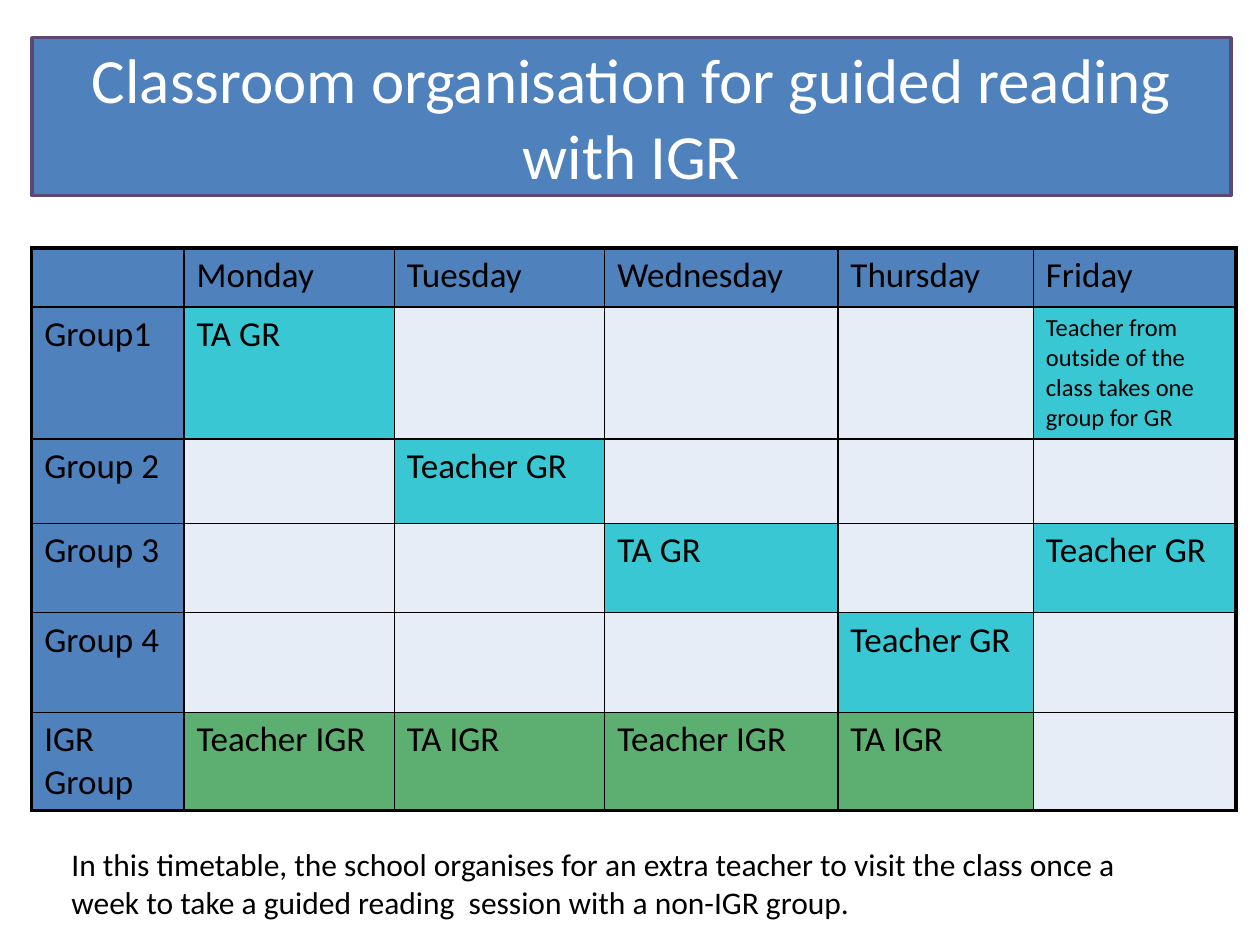
from lxml.etree import SubElement
from pptx import Presentation
from pptx.dml.color import RGBColor
from pptx.enum.text import MSO_ANCHOR, MSO_AUTO_SIZE, PP_ALIGN
from pptx.oxml.ns import qn
from pptx.util import Cm, Pt

TITLE = "Classroom organisation for guided reading with IGR"
TIMETABLE = [
    ["", "Monday", "Tuesday", "Wednesday", "Thursday", "Friday"],
    ["Group1", "TA GR", "", "", "", "Teacher from outside of the class takes one group for GR"],
    ["Group 2", "", "Teacher GR", "", "", ""],
    ["Group 3", "", "", "TA GR", "", "Teacher GR"],
    ["Group 4", "", "", "", "Teacher GR", ""],
    ["IGR Group", "Teacher IGR", "TA IGR", "Teacher IGR", "TA IGR", ""],
]
NOTE = ("In this timetable, the school organises for an extra teacher to visit the class "
        "once a week to take a guided reading  session with a non-IGR group.")

COLUMN_WIDTHS = [3.07, 4.24, 4.24, 4.7, 3.94, 4.09]
ROW_HEIGHTS = [1.19, 2.64, 1.7, 1.8, 2.01, 1.98]
LEFT = 0.64
LONG_TEXT = 20

THEME = {
    "font": "Calibri",
    "header": "4F81BD",
    "guided": "39C8D3",
    "igr": "5DAF71",
    "free": "E6EDF6",
    "frame": "5C4776",
    "ink": "000000",
    "white": "FFFFFF",
    "title_size": 36,
    "cell_size": 20,
    "small_size": 14,
    "note_size": 18,
    "frame_width": 2,
    "inner_border": 1,
    "outer_border": 2.25,
}


def colour(name):
    return RGBColor.from_string(THEME[name])


def add_text(frame, text, size, ink="ink"):
    para = frame.paragraphs[0]
    span = para.add_run()
    span.text = text
    span.font.name = THEME["font"]
    span.font.size = Pt(THEME[size])
    span.font.color.rgb = colour(ink)
    return para


def cell_fill(row, column, text):
    if row == 0 or column == 0:
        return "header"
    if not text:
        return "free"
    return "igr" if "IGR" in text else "guided"


def add_borders(cell, outer_sides):
    properties = cell._tc.get_or_add_tcPr()
    for side, is_outer in outer_sides.items():
        width = THEME["outer_border" if is_outer else "inner_border"]
        line = SubElement(properties, qn(f"a:ln{side}"), w=str(Pt(width)))
        fill = SubElement(line, qn("a:solidFill"))
        SubElement(fill, qn("a:srgbClr"), val=THEME["ink"])


def add_title(page):
    box = page.shapes.title
    box.left, box.top, box.width, box.height = Cm(LEFT), Cm(0.76), Cm(24.18), Cm(3.18)
    box.fill.solid()
    box.fill.fore_color.rgb = colour("header")
    box.line.color.rgb = colour("frame")
    box.line.width = Pt(THEME["frame_width"])
    frame = box.text_frame
    frame.auto_size = MSO_AUTO_SIZE.NONE
    frame.vertical_anchor = MSO_ANCHOR.MIDDLE
    add_text(frame, TITLE, "title_size", "white").alignment = PP_ALIGN.CENTER


def add_timetable(page):
    last_row, last_column = len(ROW_HEIGHTS) - 1, len(COLUMN_WIDTHS) - 1
    table = page.shapes.add_table(
        len(ROW_HEIGHTS), len(COLUMN_WIDTHS), Cm(LEFT), Cm(5),
        Cm(sum(COLUMN_WIDTHS)), Cm(sum(ROW_HEIGHTS))).table
    for column, width in zip(table.columns, COLUMN_WIDTHS):
        column.width = Cm(width)
    for row, height in zip(table.rows, ROW_HEIGHTS):
        row.height = Cm(height)
    for row, texts in enumerate(TIMETABLE):
        for column, text in enumerate(texts):
            cell = table.cell(row, column)
            add_borders(cell, {"L": column == 0, "R": column == last_column,
                               "T": row == 0, "B": row == last_row})
            cell.fill.solid()
            cell.fill.fore_color.rgb = colour(cell_fill(row, column, text))
            if text:
                size = "small_size" if len(text) > LONG_TEXT else "cell_size"
                add_text(cell.text_frame, text, size)


def add_note(page):
    box = page.shapes.add_textbox(Cm(1.19), Cm(16.92), Cm(22.86), Cm(1.8))
    frame = box.text_frame
    frame.word_wrap = True
    frame.auto_size = MSO_AUTO_SIZE.SHAPE_TO_FIT_TEXT
    add_text(frame, NOTE, "note_size")


def main():
    deck = Presentation()
    deck.slide_width, deck.slide_height = Cm(25.4), Cm(19.05)
    page = deck.slides.add_slide(deck.slide_layouts.get_by_name("Title Only"))
    add_title(page)
    add_timetable(page)
    add_note(page)
    deck.save("out.pptx")


if __name__ == "__main__":
    main()
